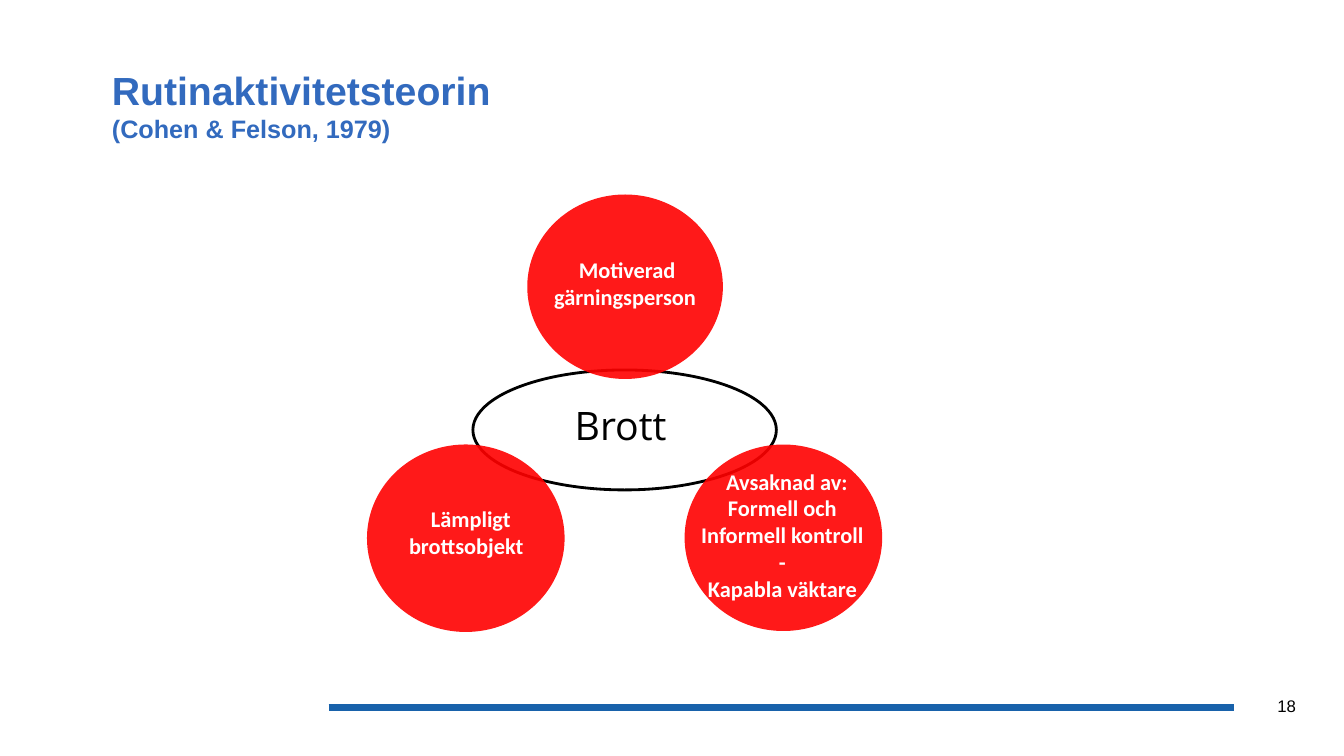
from lxml.etree import SubElement
from pptx import Presentation
from pptx.dml.color import RGBColor
from pptx.enum.shapes import MSO_CONNECTOR, MSO_SHAPE
from pptx.enum.text import MSO_ANCHOR, PP_ALIGN
from pptx.oxml.ns import qn
from pptx.util import Inches, Pt

BLACK = RGBColor(0x00, 0x00, 0x00)
WHITE = RGBColor(0xFF, 0xFF, 0xFF)
RED = RGBColor(0xFF, 0x00, 0x00)
TITLE_BLUE = RGBColor(0x32, 0x6A, 0xBE)
RULE_BLUE = RGBColor(0x18, 0x62, 0xAB)

FACTORS = [
    ((5.23, 1.93, 1.94, 1.83), (5.15, 2.5, 2.1, 0.7),
     ["Motiverad ", "gärningsperson"]),
    ((3.64, 4.41, 1.96, 1.86), (3.44, 4.97, 2.37, 1.27),
     ["Lämpligt", "brottsobjekt"]),
    ((6.79, 4.41, 1.96, 1.85), (6.78, 4.6, 1.96, 1.27),
     ["Avsaknad av:", " Formell och ", "Informell kontroll", "-", "Kapabla väktare"]),
]


def to_inches(box):
    return [Inches(length) for length in box]


def add_text(slide, box, lines, font_name, color, bold=False, margins=(0.07, 0.04)):
    frame = slide.shapes.add_textbox(*to_inches(box)).text_frame
    frame.word_wrap = True
    frame.margin_left = frame.margin_right = Inches(margins[0])
    frame.margin_top = frame.margin_bottom = Inches(margins[1])
    paragraph = frame.paragraphs[0]
    for index, (text, size) in enumerate(lines):
        if index:
            paragraph.add_line_break()
        run = paragraph.add_run()
        run.text = text
        run.font.name = font_name
        run.font.size = Pt(size)
        run.font.bold = bold
        run.font.color.rgb = color
    return frame


def center_label(frame):
    paragraph = frame.paragraphs[0]
    paragraph.alignment = PP_ALIGN.CENTER
    properties = paragraph._p.get_or_add_pPr()
    properties.set("marL", "0")
    properties.set("indent", str(Inches(0.09)))


def add_ellipse(slide, box):
    ellipse = slide.shapes.add_shape(MSO_SHAPE.OVAL, *to_inches(box))
    ellipse.shadow.inherit = False
    return ellipse


def add_title(slide, box):
    lines = [("Rutinaktivitetsteorin", 28), ("(Cohen & Felson, 1979)", 18)]
    frame = add_text(slide, box, lines, "Arial", TITLE_BLUE, True, (0.08, 0.05))
    frame.vertical_anchor = MSO_ANCHOR.MIDDLE


def add_crime(slide, box):
    left, top, width, height = box
    ellipse = add_ellipse(slide, box)
    ellipse.fill.background()
    ellipse.line.color.rgb = BLACK
    ellipse.line.width = Pt(2)
    label_box = (left - 0.41, top + 0.27, width + 0.65, 0.55)
    center_label(add_text(slide, label_box, [("Brott", 28)], "Open Sans", BLACK))


def add_factor(slide, box, label_box, lines):
    ellipse = add_ellipse(slide, box)
    ellipse.fill.solid()
    ellipse.fill.fore_color.rgb = RED
    ellipse.line.fill.background()
    color = ellipse._element.spPr.find(qn("a:solidFill"))[0]
    SubElement(color, qn("a:alpha")).set("val", "90000")
    sized_lines = [(line, 16) for line in lines]
    center_label(add_text(slide, label_box, sized_lines, "Calibri", WHITE, True))


def add_footer(slide, box):
    left, top, width, height = box
    rule_y = Inches(top + 0.17)
    rule = slide.shapes.add_connector(
        MSO_CONNECTOR.STRAIGHT, Inches(left), rule_y, Inches(left + 8.98), rule_y)
    rule.line.color.rgb = RULE_BLUE
    rule.line.width = Pt(4.5)
    SubElement(rule._element.spPr, qn("a:effectLst"))
    number_box = (left + width - 0.55, top, 0.55, height)
    add_text(slide, number_box, [("18", 12)], "Arial", BLACK, margins=(0.1, 0.05))


def main():
    presentation = Presentation()
    presentation.slide_width = Inches(13.33)
    presentation.slide_height = Inches(7.5)
    slide = presentation.slides.add_slide(presentation.slide_layouts[6])
    add_footer(slide, (3.26, 6.85, 9.86, 0.3))
    add_title(slide, (1.03, 0.42, 11.21, 1.25))
    add_crime(slide, (4.69, 3.67, 3.01, 1.19))
    for box, label_box, lines in FACTORS:
        add_factor(slide, box, label_box, lines)
    presentation.save("out.pptx")


if __name__ == "__main__":
    main()
